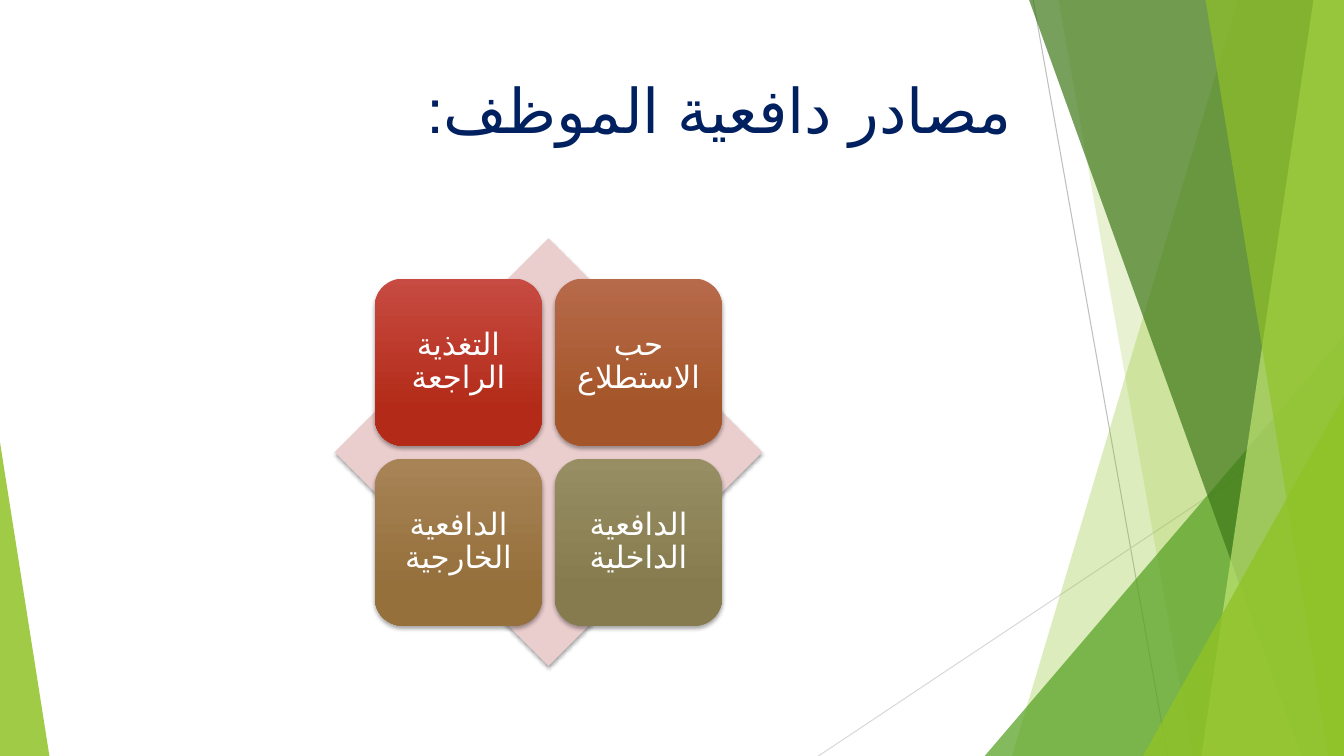
from lxml import etree
from pptx import Presentation
from pptx.dml.color import RGBColor
from pptx.enum.lang import MSO_LANGUAGE_ID
from pptx.enum.shapes import MSO_CONNECTOR, MSO_SHAPE
from pptx.enum.text import MSO_ANCHOR, PP_ALIGN
from pptx.oxml.ns import qn
from pptx.util import Pt

LINE = MSO_CONNECTOR.STRAIGHT
TRI, DIAMOND, ROUND = MSO_SHAPE.ISOSCELES_TRIANGLE, MSO_SHAPE.DIAMOND, MSO_SHAPE.ROUNDED_RECTANGLE
TOP, MIDDLE = MSO_ANCHOR.TOP, MSO_ANCHOR.MIDDLE
RIGHT, CENTER = PP_ALIGN.RIGHT, PP_ALIGN.CENTER
ARABIC = MSO_LANGUAGE_ID.ARABIC

THEME = {
    "navy": "002060", "white": "FFFFFF", "pink": "EACDCD",
    "lime": "90C226", "green": "54A021", "dark": "3F7819", "pale": "C0E474",
    "gray": "BFBFBF", "mist": "D9D9D9",
    "red": ("C74B42", "B32B18"), "rust": ("B76A4A", "A45529"),
    "tan": ("A78356", "95703B"), "olive": ("988E64", "857B4E"),
    "head": 44, "body": 22, "head_font": "Arial", "body_font": "Karla", "script_font": "Arial",
}
WIDE, HIGH = 960, 540


def write(frame, text, size, font, color, align, anchor, inset=None, space=None):
    frame.word_wrap = True
    frame.vertical_anchor = anchor
    if inset is not None:
        frame.margin_left = frame.margin_right = Pt(inset)
        frame.margin_top = frame.margin_bottom = Pt(inset)
    para = frame.paragraphs[0]
    para.alignment = align
    para._p.get_or_add_pPr().set("rtl", "1")
    if space:
        para.line_spacing = space
    run = para.add_run()
    run.text = text
    run.font.size = Pt(THEME[size])
    run.font.name = THEME[font]
    run.font.language_id = ARABIC
    run.font.color.rgb = RGBColor.from_string(THEME[color])
    etree.SubElement(run._r.rPr, qn("a:cs"), typeface=THEME["script_font"])


def paint(shape, color, alpha=100, shade=False):
    fill = shape.fill
    tone = THEME[color]
    if isinstance(tone, tuple):
        fill.gradient()
        fill.gradient_angle = 270
        for stop, part, place in zip(fill.gradient_stops, tone, (0, 0.78)):
            stop.color.rgb = RGBColor.from_string(part)
            stop.position = place
    else:
        fill.solid()
        fill.fore_color.rgb = RGBColor.from_string(tone)
        if alpha < 100:
            clr = shape._element.spPr.find(".//" + qn("a:srgbClr"))
            etree.SubElement(clr, qn("a:alpha"), val=str(alpha * 1000))
    shape.line.fill.background()
    shape.shadow.inherit = False
    if shade:
        fx = shape._element.spPr.find(qn("a:effectLst"))
        drop = etree.SubElement(fx, qn("a:outerShdw"), blurRad=str(Pt(3)), dist=str(Pt(2)),
                                dir="5400000", rotWithShape="0")
        clr = etree.SubElement(drop, qn("a:srgbClr"), val="000000")
        etree.SubElement(clr, qn("a:alpha"), val="35000")


deck = Presentation()
deck.slide_width, deck.slide_height = Pt(WIDE), Pt(HIGH)
slide = deck.slides.add_slide(deck.slide_layouts[5])
shapes = slide.shapes

# Thin lines behind the bands
for x1, y1, x2, y2, color in [(738, 0, 834, HIGH, "gray"), (WIDE, 290, 584.6, HIGH, "mist")]:
    line = shapes.add_connector(LINE, Pt(x1), Pt(y1), Pt(x2), Pt(y2))
    line.line.color.rgb = RGBColor.from_string(THEME[color])
    line.line.width = Pt(0.75)
    etree.SubElement(line._element.spPr, qn("a:effectLst"))

# Green bands: (top x, bottom x) reach the right edge, four numbers are a triangle's box
bands = [
    ((884.2, 722.9), "lime", 30),
    ((756, 851.8), "lime", 20),
    ((703.4, 239.8, 256.6, 300.2), "green", 72),
    ((735.1, 929.5), "dark", 70),
    ((938.2, 858.2), "pale", 70),
    ((861.1, 949), "lime", 65),
    ((816.5, 283, 143.5, 257), "lime", 80),
    ((0, 316, 35.3, 224), "lime", 85),
]
for spot, color, alpha in bands:
    if len(spot) == 2:
        top, low = spot
        path = shapes.build_freeform(Pt(top), 0)
        path.add_line_segments([(Pt(WIDE), 0), (Pt(WIDE), Pt(HIGH)), (Pt(low), Pt(HIGH))], close=True)
        band = path.convert_to_shape()
    else:
        band = shapes.add_shape(TRI, *map(Pt, spot))
        band.adjustments[0] = 1 if spot[0] else 0
    paint(band, color, alpha)

# Title
title = shapes.title
title.left, title.top, title.width, title.height = Pt(53.3), Pt(48), Pt(677), Pt(104)
write(title.text_frame, "مصادر دافعية الموظف:", size="head", font="head_font",
      color="navy", align=RIGHT, anchor=TOP)

# Diamond with two by two tiles around its centre
MID_X, MID_Y, SPAN, SIDE, GAP = 391.8, 323, 305.4, 119.4, 9.2
gem = shapes.add_shape(DIAMOND, Pt(MID_X - SPAN / 2), Pt(MID_Y - SPAN / 2), Pt(SPAN), Pt(SPAN))
paint(gem, "pink", shade=True)

tiles = [("التغذية الراجعة", "red"), ("حب الاستطلاع", "rust"),
         ("الدافعية الخارجية", "tan"), ("الدافعية الداخلية", "olive")]
for i, (text, color) in enumerate(tiles):
    row, col = divmod(i, 2)
    left = MID_X - SIDE - GAP / 2 + col * (SIDE + GAP)
    top = MID_Y - SIDE - GAP / 2 + row * (SIDE + GAP)
    tile = shapes.add_shape(ROUND, Pt(left), Pt(top), Pt(SIDE), Pt(SIDE))
    paint(tile, color, shade=True)
    write(tile.text_frame, text, size="body", font="body_font", color="white",
          align=CENTER, anchor=MIDDLE, inset=6.6, space=0.9)

deck.save("out.pptx")
